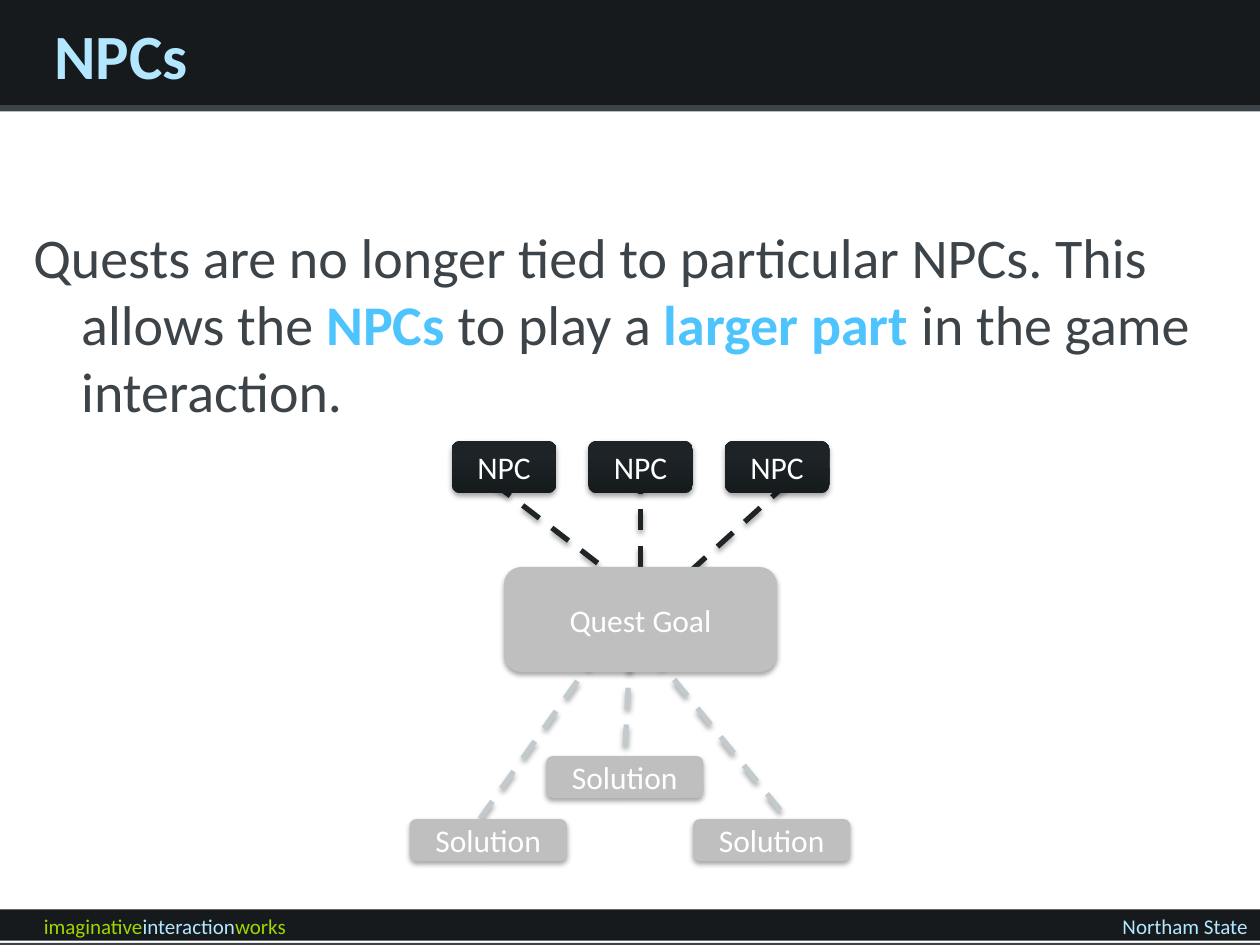
"""Build the NPCs slide: a title, a statement and a quest diagram."""
from dataclasses import dataclass
from lxml.etree import SubElement
from pptx import Presentation
from pptx.dml.color import RGBColor
from pptx.enum.dml import MSO_LINE
from pptx.enum.shapes import MSO_CONNECTOR as Link, MSO_SHAPE as Kind
from pptx.enum.text import MSO_ANCHOR as Anchor, PP_ALIGN as Align
from pptx.oxml.ns import qn
from pptx.util import Inches, Pt


@dataclass(frozen=True)
class Theme:
    font: str = "Calibri"
    dark: str = "161A1C"
    slate: str = "3D4449"
    pale: str = "B3E7FF"
    blue: str = "4EC4FF"
    lime: str = "9ED600"
    white: str = "FFFFFF"
    gray: str = "BFBFBF"
    dash: str = "1F2427"
    faint: str = "C2CACE"
    low: str = "161B1E"
    high: str = "1D2327"
    title: int = 36
    body: int = 32
    label: int = 18
    foot: int = 12
    stroke: int = 3


LOOK = Theme()
WIDE, TALL = 10, 7.5
COLS, ROWS = 120, 90

BARS = [
    ((0, 0, COLS, 10), LOOK.dark),
    ((0, 86.6, COLS, 3), LOOK.dark),
    ((0, 10, COLS, 0.6), LOOK.slate),
    ((0, 89.8, COLS, 0.2), LOOK.slate),
]
TITLE = [("NPCs", LOOK.pale, True)]
BODY = [
    ("Quests are no longer tied to particular NPCs. This allows the ", LOOK.slate, False),
    ("NPCs", LOOK.blue, True),
    (" to play a ", LOOK.slate, False),
    ("larger part ", LOOK.blue, True),
    ("in the game interaction.", LOOK.slate, False),
]
STUDIO = [
    ("imaginative", LOOK.lime, False),
    ("interaction", LOOK.pale, False),
    ("works", LOOK.lime, False),
]
SCHOOL = [("Northam State", LOOK.pale, False)]

LINKS = [
    (LOOK.faint, [(57, 62, 45, 79), (62, 62, 75, 78), (60, 62, 59.5, 72)]),
    (LOOK.dash, [(61, 45, 61, 54), (75, 46, 64, 56), (47, 46, 60, 56)]),
]
NODES = [
    ("Quest Goal", (26, 10), [(48, 54)], False),
    ("NPC", (10, 5), [(43 + 13 * step, 42) for step in range(3)], True),
    ("Solution", (15, 4), [(39, 78), (52, 72), (66, 78)], False),
]


def grid(*cells):
    units = (WIDE / COLS, TALL / ROWS) * 2
    return [Inches(cell * unit) for cell, unit in zip(cells, units)]


def tint(code):
    return RGBColor.from_string(code)


def write(frame, runs, size, align=Align.LEFT, anchor=Anchor.TOP):
    frame.word_wrap = True
    frame.vertical_anchor = anchor
    para = frame.paragraphs[0]
    para.alignment = align
    for words, color, bold in runs:
        run = para.add_run()
        run.text = words
        font = run.font
        font.name, font.size, font.bold = LOOK.font, Pt(size), bold
        font.color.rgb = tint(color)
    return para


def add_text(slide, cells, *args):
    frame = slide.shapes.add_textbox(*grid(*cells)).text_frame
    return frame, write(frame, *args)


def add_bar(slide, cells, color):
    bar = slide.shapes.add_shape(Kind.RECTANGLE, *grid(*cells))
    bar.shadow.inherit = False
    bar.fill.solid()
    bar.fill.fore_color.rgb = tint(color)
    bar.line.fill.background()


def shade(item):
    effects = SubElement(item.element.spPr, qn("a:effectLst"))
    drop = SubElement(effects, qn("a:outerShdw"), blurRad=str(Pt(3.1)),
                      dist=str(Pt(1.8)), dir="5400000", rotWithShape="0")
    color = SubElement(drop, qn("a:srgbClr"), val="000000")
    SubElement(color, qn("a:alpha"), val="35000")


def add_link(slide, ends, color):
    link = slide.shapes.add_connector(Link.STRAIGHT, *grid(*ends))
    link.line.color.rgb = tint(color)
    link.line.width = Pt(LOOK.stroke)
    link.line.dash_style = MSO_LINE.DASH
    shade(link)


def add_node(slide, words, cells, strong):
    node = slide.shapes.add_shape(Kind.ROUNDED_RECTANGLE, *grid(*cells))
    if strong:
        node.fill.gradient()
        node.fill.gradient_angle = 90
        stops = node.fill.gradient_stops
        for stop, color, place in zip(stops, (LOOK.low, LOOK.high), (0, 0.8)):
            stop.color.rgb = tint(color)
            stop.position = place
    else:
        node.fill.solid()
        node.fill.fore_color.rgb = tint(LOOK.gray)
    node.line.fill.background()
    shade(node)
    write(node.text_frame, [(words, LOOK.white, False)], LOOK.label,
          Align.CENTER, Anchor.MIDDLE)


def main():
    deck = Presentation()
    deck.slide_width, deck.slide_height = Inches(WIDE), Inches(TALL)
    slide = deck.slides.add_slide(deck.slide_layouts[6])
    for cells, color in BARS:
        add_bar(slide, cells, color)
    add_text(slide, (3, 86.4, 47, 3.6), STUDIO, LOOK.foot)
    add_text(slide, (80, 86.4, 40, 3.6), SCHOOL, LOOK.foot, Align.RIGHT)
    add_text(slide, (4, 0, 108, 10.4), TITLE, LOOK.title, Align.LEFT, Anchor.MIDDLE)
    frame, para = add_text(slide, (2, 13, 115, 66.4), BODY, LOOK.body)
    frame.margin_top = Inches(0.68)
    props = para._p.get_or_add_pPr()
    props.set("marL", str(Inches(0.38)))
    props.set("indent", str(-Inches(0.38)))
    for color, group in LINKS:
        for ends in group:
            add_link(slide, ends, color)
    for words, size, spots, strong in NODES:
        for spot in spots:
            add_node(slide, words, spot + size, strong)
    deck.save("out.pptx")


if __name__ == "__main__":
    main()
